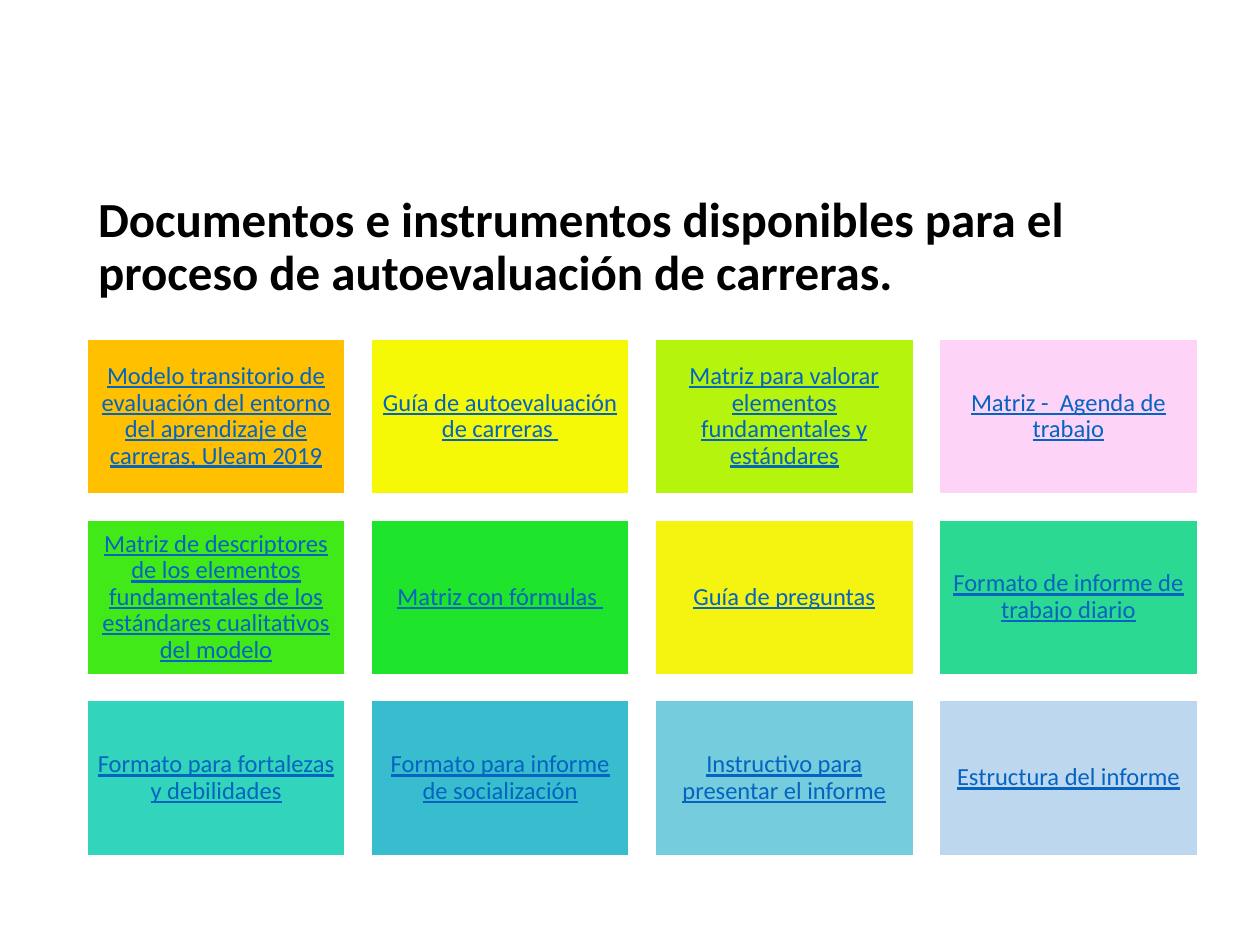
import pptx
import pptx.dml.color
import pptx.enum.shapes
import pptx.enum.text
import pptx.util

Inches = pptx.util.Inches
Pt = pptx.util.Pt
RGBColor = pptx.dml.color.RGBColor
MIDDLE = pptx.enum.text.MSO_ANCHOR.MIDDLE

BLACK = RGBColor(0x00, 0x00, 0x00)
WHITE = RGBColor(0xFF, 0xFF, 0xFF)
LINK_BLUE = RGBColor(0x05, 0x63, 0xC1)
AMBER = RGBColor(0xFF, 0xC0, 0x00)
YELLOW = RGBColor(0xF6, 0xF9, 0x06)
LIME = RGBColor(0xB4, 0xF4, 0x0D)
PINK = RGBColor(0xFD, 0xD3, 0xF7)
LEAF = RGBColor(0x42, 0xE9, 0x19)
GREEN = RGBColor(0x1F, 0xE4, 0x2C)
LEMON = RGBColor(0xF4, 0xF4, 0x10)
MINT = RGBColor(0x2C, 0xD9, 0x92)
TURQUOISE = RGBColor(0x32, 0xD4, 0xBC)
TEAL = RGBColor(0x38, 0xBD, 0xCE)
SKY = RGBColor(0x75, 0xCC, 0xDD)
PALE_BLUE = RGBColor(0xBD, 0xD7, 0xEE)

DOCUMENTS = [
    ("Modelo transitorio de evaluación del entorno del aprendizaje de carreras, Uleam 2019", AMBER),
    ("Guía de autoevaluación de carreras ", YELLOW),
    ("Matriz para valorar elementos fundamentales y estándares", LIME),
    ("Matriz -  Agenda de trabajo", PINK),
    ("Matriz de descriptores de los elementos fundamentales de los estándares cualitativos del modelo", LEAF),
    ("Matriz con fórmulas ", GREEN),
    ("Guía de preguntas", LEMON),
    ("Formato de informe de trabajo diario", MINT),
    ("Formato para fortalezas y debilidades", TURQUOISE),
    ("Formato para informe de socialización", TEAL),
    ("Instructivo para presentar el informe", SKY),
    ("Estructura del informe", PALE_BLUE),
]


def add_run(p, text, size, color):
    p.line_spacing = 0.9
    r = p.add_run()
    r.text = text
    r.font.name = "Calibri"
    r.font.size = Pt(size)
    r.font.color.rgb = color
    return r


prs = pptx.Presentation()
prs.slide_width = Inches(10)
prs.slide_height = Inches(7.5)
s = prs.slides.add_slide(prs.slide_layouts[6])

# Title
tf = s.shapes.add_textbox(Inches(0.68), Inches(1.5), Inches(8.62), Inches(0.94)).text_frame
tf.word_wrap = True
tf.vertical_anchor = MIDDLE
r = add_run(tf.paragraphs[0],
            "Documentos e instrumentos disponibles para el proceso de autoevaluación de carreras.",
            28, BLACK)
r.font.bold = True

# Grid of document tiles, four to a row
COLUMNS = 4
LEFT, TOP = 0.69, 2.69
WIDTH, HEIGHT = 2.05, 1.23
GAP = 0.205
for i, (text, color) in enumerate(DOCUMENTS):
    row, col = divmod(i, COLUMNS)
    sp = s.shapes.add_shape(
        pptx.enum.shapes.MSO_SHAPE.RECTANGLE,
        Inches(LEFT + col * (WIDTH + GAP)), Inches(TOP + row * (HEIGHT + GAP)),
        Inches(WIDTH), Inches(HEIGHT))
    sp.shadow.inherit = False
    sp.fill.solid()
    sp.fill.fore_color.rgb = color
    sp.line.color.rgb = WHITE
    sp.line.width = Pt(1)
    tf = sp.text_frame
    tf.word_wrap = True
    tf.vertical_anchor = MIDDLE
    tf.margin_left = tf.margin_right = tf.margin_top = tf.margin_bottom = Inches(0.06)
    p = tf.paragraphs[0]
    p.alignment = pptx.enum.text.PP_ALIGN.CENTER
    r = add_run(p, text, 14, LINK_BLUE)
    r.font.underline = True

prs.save("out.pptx")
